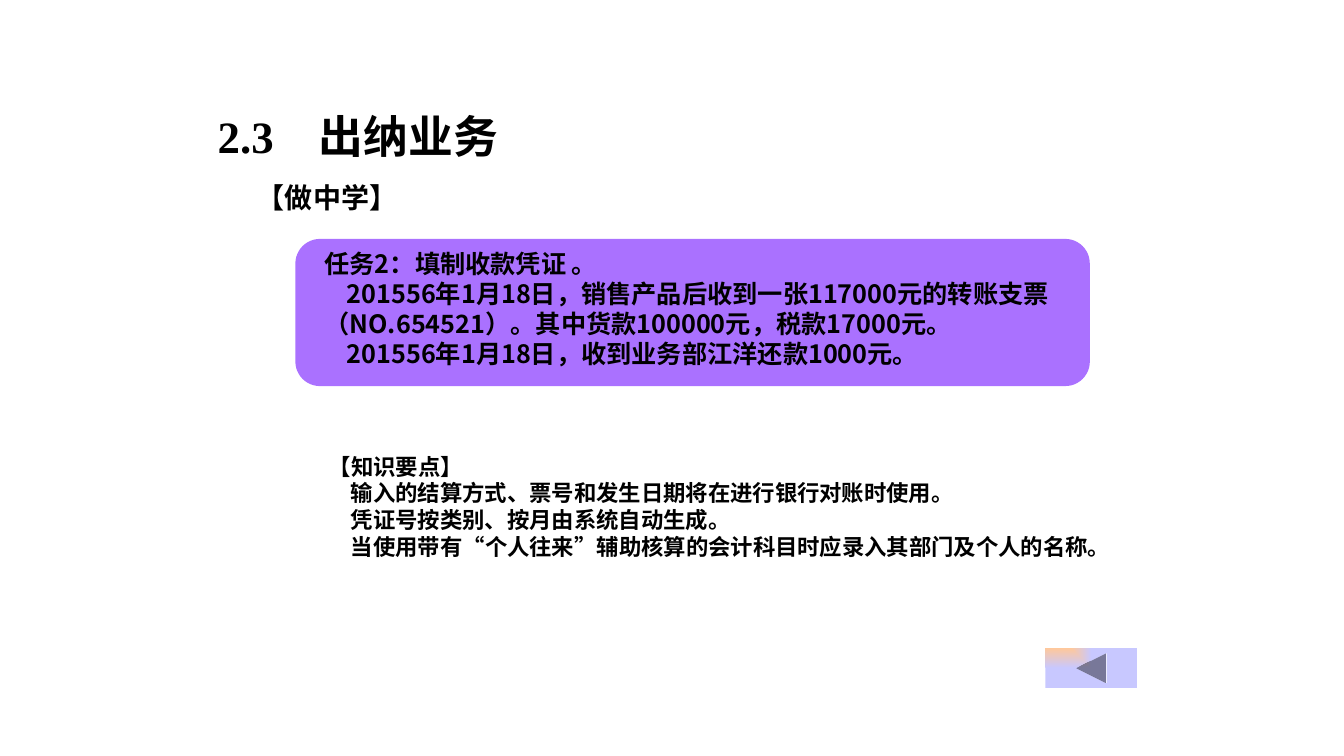
import pptx
import pptx.util
import pptx.dml.color
import pptx.enum.shapes
import pptx.enum.text
import lxml.etree

deck = pptx.Presentation()
deck.slide_width = pptx.util.Inches(13.33)
deck.slide_height = pptx.util.Inches(7.5)
col = deck.slide_width / 100
row = deck.slide_height / 100
slide = deck.slides.add_slide(deck.slide_layouts[1])
kinds = pptx.enum.shapes.MSO_SHAPE
mid = pptx.enum.text.MSO_ANCHOR.MIDDLE
top = pptx.enum.text.MSO_ANCHOR.TOP
ns = "http://schemas.openxmlformats.org/drawingml/2006/main"
sans = "Noto Sans CJK SC"
serif = "Times New Roman"


def hue(code):
    return pptx.dml.color.RGBColor.from_string(code)


def write(shape, size, anchor, wrap, paras):
    frame = shape.text_frame
    frame.word_wrap = wrap
    frame.auto_size = pptx.enum.text.MSO_AUTO_SIZE.NONE
    frame.vertical_anchor = anchor
    for i, (dent, runs) in enumerate(paras):
        para = frame.paragraphs[0] if i == 0 else frame.add_paragraph()
        para.alignment = pptx.enum.text.PP_ALIGN.LEFT
        para.space_before = pptx.util.Pt(0)
        props = para._p.get_or_add_pPr()
        props.set("marL", "0")
        props.set("indent", str(pptx.util.Inches(dent)))
        lxml.etree.SubElement(props, f"{{{ns}}}buNone")
        for text, face in runs:
            run = para.add_run()
            run.text = text
            run.font.size = pptx.util.Pt(size)
            run.font.bold = True
            run.font.name = face
            run.font.color.rgb = hue("000000")
            east = lxml.etree.SubElement(run._r.get_or_add_rPr(), f"{{{ns}}}ea")
            east.set("typeface", sans)


def_size = [
    (kinds.ACTION_BUTTON_BACK_OR_PREVIOUS, (77.79, 85.73, 6.83, 5.33)),
    (kinds.ROUNDED_RECTANGLE, (21.98, 31.6, 59.11, 19.47)),
]
forms = []
for kind, (x, y, w, h) in def_size:
    form = slide.shapes.add_shape(kind, int(x * col), int(y * row), int(w * col), int(h * row))
    form.shadow.inherit = False
    form.line.fill.background()
    forms.append(form)
back, panel = forms

panel.fill.solid()
panel.fill.fore_color.rgb = hue("AA71FF")

back.fill.gradient()
for stop, code, place in zip(back.fill.gradient_stops, ("FFC89B", "C8C8FF"), (0, 1)):
    stop.color.rgb = hue(code)
    stop.position = place
lin = back._element.spPr.find(f".//{{{ns}}}lin")
ramp = lxml.etree.Element(f"{{{ns}}}path", {"path": "rect"})
lxml.etree.SubElement(ramp, f"{{{ns}}}fillToRect", {"r": "100000", "b": "100000"})
lin.getparent().replace(lin, ramp)

title = slide.shapes.title
points = slide.placeholders[1]
label = slide.shapes.add_textbox(0, 0, 0, 0)
task = slide.shapes.add_textbox(0, 0, 0, 0)
spots = [
    (title, (15.45, 13.73, 66.77, 8.53)),
    (points, (23.71, 57.33, 58.51, 19.33)),
    (label, (18.38, 23.2, 12, 5.87)),
    (task, (23.41, 32.13, 55.81, 17.47)),
]
for shape, (x, y, w, h) in spots:
    shape.left, shape.top = int(x * col), int(y * row)
    shape.width, shape.height = int(w * col), int(h * row)

write(title, 32, top, True, [(0, [("2.3\t出纳业务", serif)])])
tabs = lxml.etree.SubElement(title.text_frame.paragraphs[0]._p.pPr, f"{{{ns}}}tabLst")
lxml.etree.SubElement(tabs, f"{{{ns}}}tab", {"pos": str(pptx.util.Inches(0.87)), "algn": "l"})

write(label, 20, mid, False, [(0, [("【做中学】", serif)])])

write(task, 18, top, True, [
    (0, [("任务2：填制收款凭证 。", sans)]),
    (0.22, [("201556年1月18日，销售产品后收到一张117000元的转账支票（NO.654521）。其中货款100000元，税款17000元。", sans)]),
    (0.22, [("201556年1月18日，收到业务部江洋还款1000元。", sans)]),
])

write(points, 16, mid, True, [
    (0, [("【知识要点】", sans)]),
    (0.22, [("输入的结算方式、票号和发生日期将在进行银行对账时使用。", sans)]),
    (0.22, [("凭证号按类别、按月由系统自动生成。", sans)]),
    (0.22, [
        ("当使用带有", sans),
        ("“", serif),
        ("个人往来", sans),
        ("”", serif),
        ("辅助核算的会计科目时应录入其部门及个人的名称。", sans),
    ]),
])

deck.save("out.pptx")
